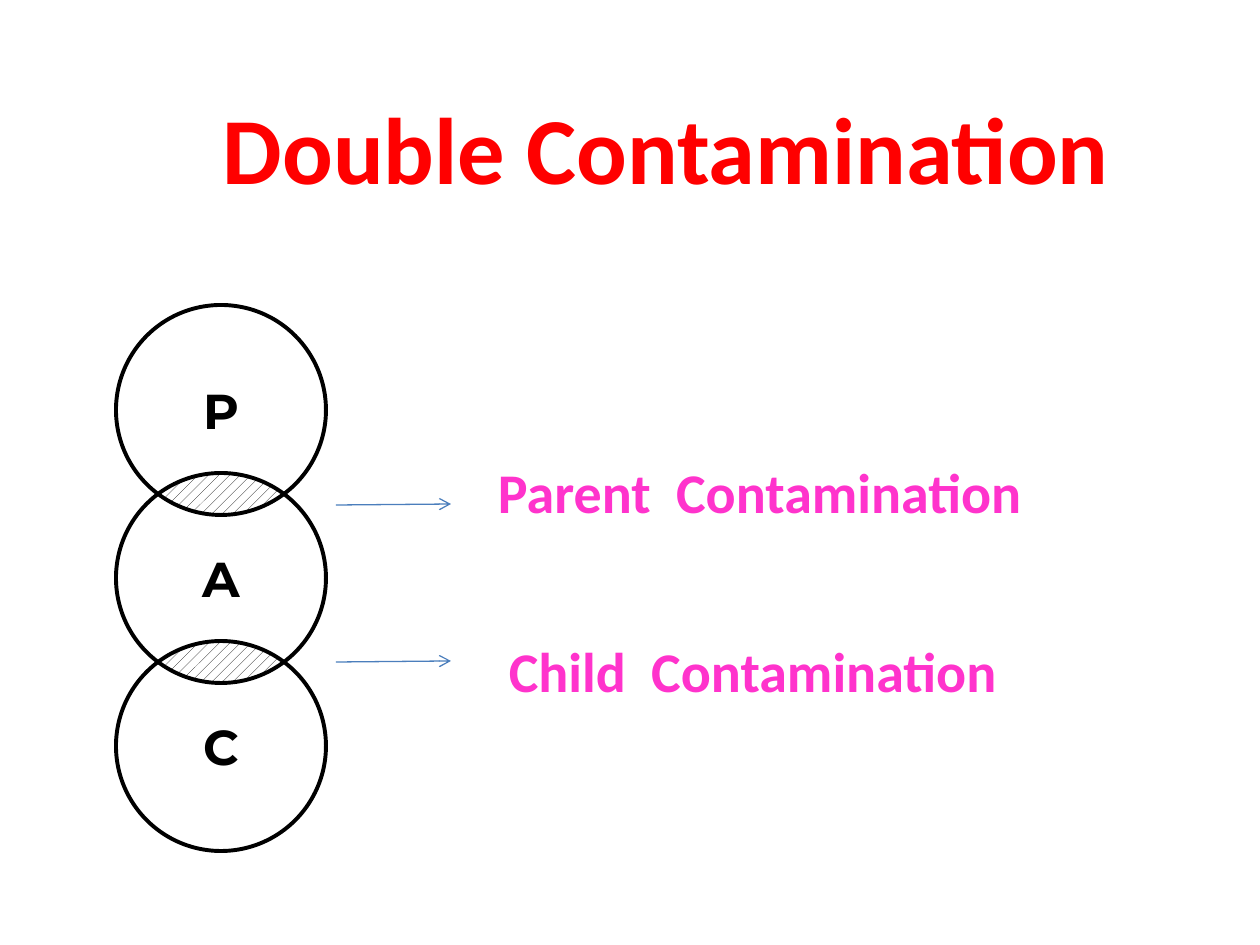
import math
from lxml import etree
from pptx import Presentation
from pptx import util as u
from pptx.dml.color import RGBColor
from pptx.enum import dml, shapes, text
from pptx.oxml import ns

PX = 914400 / 126
BLACK = RGBColor(0x00, 0x00, 0x00)
WHITE = RGBColor(0xFF, 0xFF, 0xFF)
RED = RGBColor(0xFF, 0x00, 0x00)
PINK = RGBColor(0xFF, 0x33, 0xCC)
BLUE = RGBColor(0x4B, 0x7E, 0xBC)


def px(n):
    return u.Emu(round(n * PX))


def set_text(shape, words, font, size, color):
    tf = shape.text_frame
    p = tf.paragraphs[0]
    p.text = words
    p.alignment = text.PP_ALIGN.CENTER
    p.font.name = font
    p.font.size = u.Pt(size)
    p.font.bold = True
    p.font.color.rgb = color
    return tf


prs = Presentation()
prs.slide_width, prs.slide_height = px(1260), px(945)
s = prs.slides.add_slide(prs.slide_layouts[5])

title = s.shapes.title
title.left, title.top, title.width, title.height = px(116), px(84), px(1081), px(127)
tf = set_text(title, "Double Contamination", "Calibri", 54, RED)
tf.margin_left = px(32)
tf.vertical_anchor = text.MSO_ANCHOR.TOP
tf.auto_size = text.MSO_AUTO_SIZE.SHAPE_TO_FIT_TEXT

left, top, radius, step = 116, 305, 105, 168
center = left + radius
half_angle = math.acos(step / 2 / radius)
sweep = [half_angle * i / 8 for i in range(-8, 9)]

for i in range(2):
    upper = top + radius + i * step
    lower = upper + step
    points = [(px(center + radius * math.sin(a)), px(lower - radius * math.cos(a))) for a in sweep]
    points += [(px(center - radius * math.sin(a)), px(upper + radius * math.cos(a))) for a in sweep]
    builder = s.shapes.build_freeform(*points[0])
    builder.add_line_segments(points[1:], close=True)
    overlap = builder.convert_to_shape()
    overlap.shadow.inherit = False
    overlap.line.fill.background()
    overlap.fill.patterned()
    overlap.fill.pattern = dml.MSO_PATTERN.PERCENT_20
    overlap.fill.fore_color.rgb = BLACK
    overlap.fill.back_color.rgb = WHITE

for i, letter in enumerate("PAC"):
    circle = s.shapes.add_shape(shapes.MSO_SHAPE.OVAL, px(left), px(top + i * step),
                                px(2 * radius), px(2 * radius))
    circle.shadow.inherit = False
    circle.fill.background()
    circle.line.color.rgb = BLACK
    circle.line.width = u.Pt(2.25)
    tf = set_text(circle, letter, "Montserrat", 28, BLACK)
    tf.word_wrap = False
    tf.vertical_anchor = text.MSO_ANCHOR.MIDDLE
    tf.paragraphs[0].space_before = u.Pt(6)

for words, x, y, width, arrow_y in [
    ("Parent  Contamination", 483, 451, 554, 505),
    ("Child  Contamination", 494, 630, 518, 662),
]:
    arrow = s.shapes.add_connector(shapes.MSO_CONNECTOR.STRAIGHT, px(336), px(arrow_y),
                                   px(451), px(arrow_y - 1))
    arrow.line.color.rgb = BLUE
    arrow.line.width = u.Pt(0.75)
    etree.SubElement(arrow.line._get_or_add_ln(), ns.qn("a:tailEnd"), type="arrow")
    etree.SubElement(arrow._element.spPr, ns.qn("a:effectLst"))

    label = s.shapes.add_textbox(px(x), px(y), px(width), px(81))
    tf = set_text(label, words, "Calibri", 32, PINK)
    tf.word_wrap = False
    tf.auto_size = text.MSO_AUTO_SIZE.SHAPE_TO_FIT_TEXT

prs.save("out.pptx")
